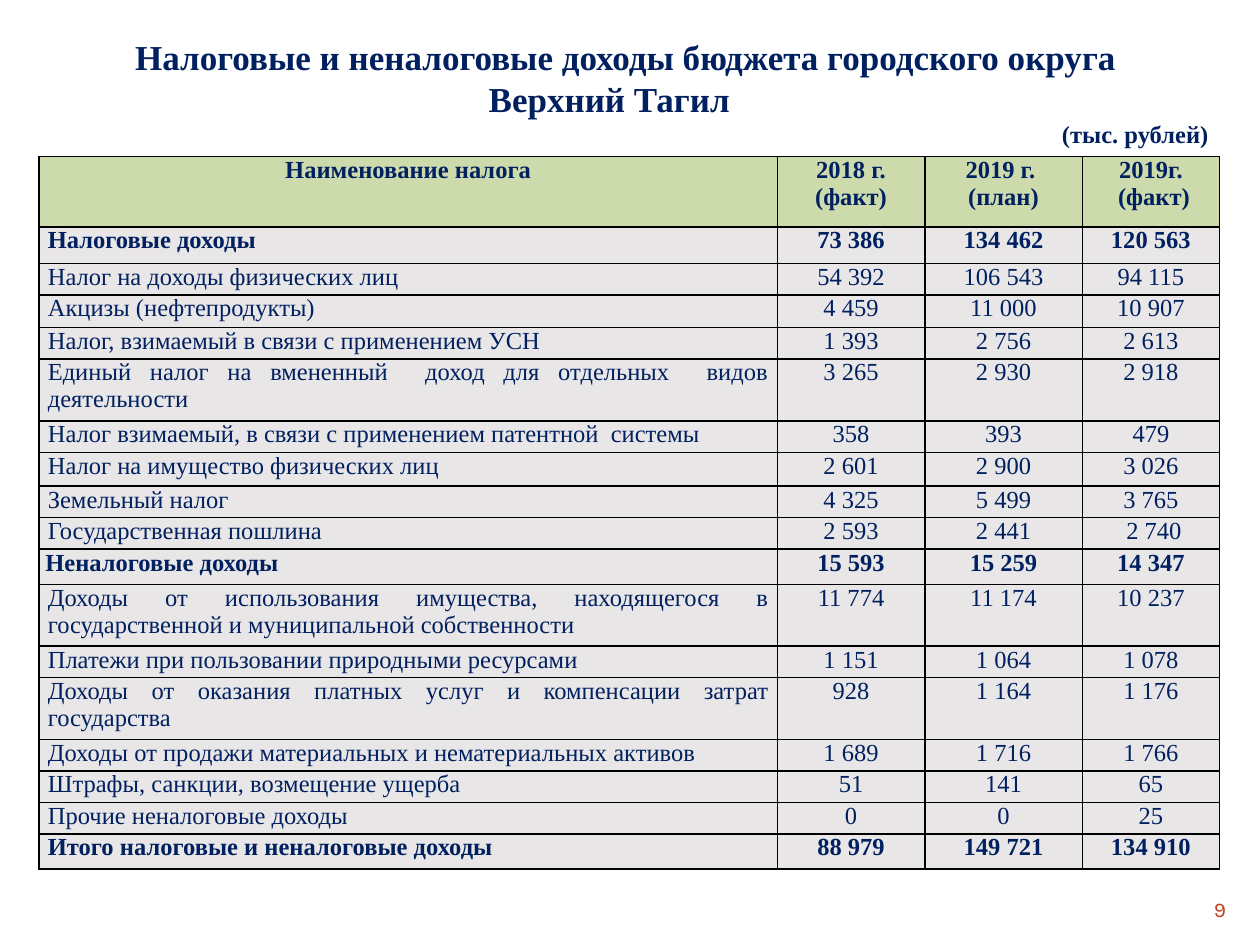
from lxml import etree
from pptx import Presentation
from pptx import util as u
from pptx.dml.color import RGBColor
from pptx.enum import text
from pptx.oxml.ns import qn

SERIF = "Times New Roman"
NAVY = "002060"
ALIGN = text.PP_ALIGN
COLUMN_WIDTHS = [5.86, 1.17, 1.25, 1.09]
HEADER = ["Наименование налога", "2018 г.\n(факт)", "2019 г. \n(план)", "2019г.\n (факт)"]
TOTALS = ["Налоговые доходы", "Неналоговые доходы", "Итого налоговые и неналоговые доходы"]
INCOME = [
    (0.29, "Налоговые доходы", "73 386", "134 462", "120 563"),
    (0.25, "Налог на доходы физических лиц", "54 392", "106 543", "94 115"),
    (0.26, "Акцизы (нефтепродукты)", "4 459", "11 000", "10 907"),
    (0.25, "Налог, взимаемый в связи с применением УСН", "1 393", "2 756", "2 613"),
    (0.49, "Единый налог на вмененный  доход для отдельных  видов деятельности",
     "3 265", "2 930", "2 918"),
    (0.25, "Налог взимаемый, в связи с применением патентной  системы", "358", "393", "479"),
    (0.27, "Налог на имущество физических лиц", "2 601", "2 900", "3 026"),
    (0.25, "Земельный налог", "4 325", "5 499", "3 765"),
    (0.25, "Государственная пошлина", "2 593", "2 441", " 2 740"),
    (0.28, "Неналоговые доходы", "15 593", "15 259", "14 347"),
    (0.49, "Доходы от использования имущества, находящегося в государственной "
     "и муниципальной собственности", "11 774", "11 174", "10 237"),
    (0.25, "Платежи при пользовании природными ресурсами", "1 151", "1 064", "1 078"),
    (0.49, "Доходы от оказания платных услуг и компенсации затрат государства",
     "928", "1 164", "1 176"),
    (0.25, "Доходы от продажи материальных и нематериальных активов",
     "1 689", "1 716", "1 766"),
    (0.25, "Штрафы, санкции, возмещение ущерба", "51", "141", "65"),
    (0.25, "Прочие неналоговые доходы", "0", "0", "25"),
    (0.28, "Итого налоговые и неналоговые доходы", "88 979", "149 721", "134 910"),
]


def color(value):
    return RGBColor.from_string(value)


def add_span(para, words, size, bold=False, font=SERIF, ink=NAVY):
    span = para.add_run()
    span.text = words
    span.font.size = u.Pt(size)
    span.font.bold = bold
    span.font.name = font
    span.font.color.rgb = color(ink)


def add_box(page, left, top, width, height):
    box = page.shapes.add_textbox(*map(u.Inches, (left, top, width, height)))
    box.text_frame.word_wrap = True
    return box.text_frame


def add_title(page):
    frame = add_box(page, 0.31, 0.23, 9.38, 1.01)
    frame.auto_size = text.MSO_AUTO_SIZE.SHAPE_TO_FIT_TEXT
    first = frame.paragraphs[0]
    first.alignment = ALIGN.CENTER
    add_span(first, "Налоговые и неналоговые доходы бюджета городского округа ", 20, True)
    second = frame.add_paragraph()
    second.alignment = ALIGN.LEFT
    second._p.get_or_add_pPr().set("marL", str(u.Inches(3.47)))
    add_span(second, "Верхний Тагил", 20, True)
    unit = frame.add_paragraph()
    unit.alignment = ALIGN.RIGHT
    add_span(unit, "(тыс. рублей)", 14, True)


def add_page_number(page):
    frame = add_box(page, 9, 7.08, 0.83, 0.27)
    frame.vertical_anchor = text.MSO_ANCHOR.MIDDLE
    para = frame.paragraphs[0]
    para.alignment = ALIGN.RIGHT
    add_span(para, "9", 12, font="Karla", ink="BA4014")


def set_borders(cell):
    props = cell._tc.get_or_add_tcPr()
    for position, side in enumerate(("a:lnL", "a:lnR", "a:lnT", "a:lnB")):
        line = etree.Element(qn(side), w=str(u.Pt(1)))
        fill = etree.SubElement(line, qn("a:solidFill"))
        etree.SubElement(fill, qn("a:srgbClr"), val="000000")
        props.insert(position, line)


def fill_cell(cell, words, bold, background, align, inset):
    cell.margin_left = cell.margin_right = u.Inches(inset)
    cell.margin_top = cell.margin_bottom = 0
    cell.fill.solid()
    cell.fill.fore_color.rgb = color(background)
    set_borders(cell)
    for index, line in enumerate(words.split("\n")):
        frame = cell.text_frame
        para = frame.add_paragraph() if index else frame.paragraphs[0]
        para.alignment = align
        add_span(para, line, 14, bold)


def add_income_table(page):
    rows = [(0.56, *HEADER), *INCOME]
    frame = page.shapes.add_table(len(rows), len(HEADER), u.Inches(0.31), u.Inches(1.24),
                                  u.Inches(9.38), u.Inches(5.63))
    table = frame.table
    table.first_row = table.horz_banding = False
    for column, width in zip(table.columns, COLUMN_WIDTHS):
        column.width = u.Inches(width)
    for r, (height, *values) in enumerate(rows):
        table.rows[r].height = u.Inches(height)
        bold = r == 0 or values[0] in TOTALS
        background = "E9E6E7" if r else "CCDAAC"
        for c, value in enumerate(values):
            align, inset = ALIGN.CENTER, 0.05
            if value == "Неналоговые доходы":
                align = ALIGN.LEFT
            elif r and c == 0:
                align, inset = ALIGN.JUSTIFY, 0.07
            fill_cell(table.cell(r, c), value, bold, background, align, inset)


def main():
    deck = Presentation()
    deck.slide_width, deck.slide_height = u.Inches(10), u.Inches(7.5)
    page = deck.slides.add_slide(deck.slide_layouts[6])
    add_page_number(page)
    add_title(page)
    add_income_table(page)
    deck.save("out.pptx")


if __name__ == "__main__":
    main()
